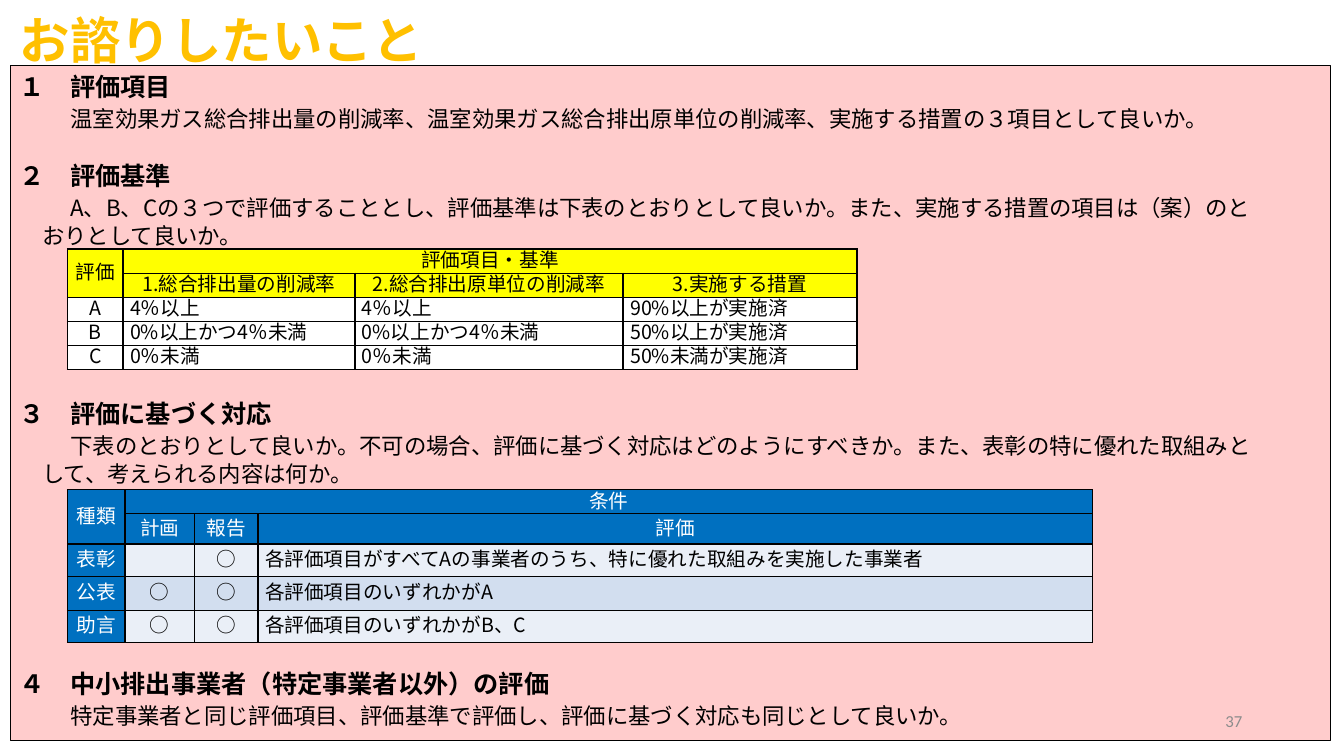
from dataclasses import dataclass

from lxml.etree import SubElement
from pptx import Presentation
from pptx.dml.color import RGBColor
from pptx.enum.shapes import MSO_SHAPE as Shape
from pptx.enum.text import MSO_ANCHOR as Anchor, PP_ALIGN as Align
from pptx.oxml.ns import qn
from pptx.slide import Slide
from pptx.util import Inches, Pt

BLACK = RGBColor(0x00, 0x00, 0x00)
WHITE = RGBColor(0xFF, 0xFF, 0xFF)
GOLD = RGBColor(0xFF, 0xC0, 0x00)
PINK = RGBColor(0xFF, 0xCC, 0xCC)
YELLOW = RGBColor(0xFF, 0xFF, 0x00)
BLUE = RGBColor(0x00, 0x70, 0xC0)
PALE = RGBColor(0xEA, 0xEF, 0xF7)
PALE_BLUE = RGBColor(0xD2, 0xDE, 0xEF)
GREY = RGBColor(0x8C, 0x8C, 0x8C)

SECTIONS = [
    (0, "１　評価項目", [
        "温室効果ガス総合排出量の削減率、温室効果ガス総合排出原単位の削減率、実施する措置の３項目として良いか。"]),
    (19.5, "２　評価基準", [
        "A、B、Cの３つで評価することとし、評価基準は下表のとおりとして良いか。また、実施する措置の項目は（案）のと",
        "おりとして良いか。"]),
    (106, "３　評価に基づく対応", [
        "下表のとおりとして良いか。不可の場合、評価に基づく対応はどのようにすべきか。また、表彰の特に優れた取組みと",
        "して、考えられる内容は何か。"]),
    (129, "４　中小排出事業者（特定事業者以外）の評価", [
        "特定事業者と同じ評価項目、評価基準で評価し、評価に基づく対応も同じとして良いか。"]),
]

CRITERIA = [
    ["評価", "評価項目・基準", "", ""],
    ["", "1.総合排出量の削減率", "2.総合排出原単位の削減率", "3.実施する措置"],
    ["A", "4％以上", "4％以上", "90%以上が実施済"],
    ["B", "0%以上かつ4％未満", "0%以上かつ4％未満", "50%以上が実施済"],
    ["C", "0％未満", "0％未満", "50%未満が実施済"],
]

RESPONSES = [
    ["種類", "条件", "", ""],
    ["", "計画", "報告", "評価"],
    ["表彰", "", "○", "各評価項目がすべてAの事業者のうち、特に優れた取組みを実施した事業者"],
    ["公表", "○", "○", "各評価項目のいずれかがA"],
    ["助言", "○", "○", "各評価項目のいずれかがB、C"],
]


@dataclass
class Painter:
    """Draws text, panels and tables on one slide in a shared style."""

    page: Slide
    font: str = "Noto Sans CJK JP"

    def set_text(self, para, text, size, color=BLACK, bold=False, align=Align.LEFT,
                 leading=None, font=None):
        para.text = text
        para.alignment = align
        if leading:
            para.line_spacing = Pt(leading)
        para.font.size = Pt(size)
        para.font.bold = bold
        para.font.color.rgb = color
        para.font.name = font or self.font
        defaults = para._p.pPr.find(qn("a:defRPr"))
        SubElement(defaults, qn("a:ea")).set("typeface", para.font.name)

    def label(self, left, top, width, height, text, size, anchor=Anchor.TOP, **style):
        box = self.page.shapes.add_textbox(*map(Inches, (left, top, width, height)))
        box.text_frame.word_wrap = True
        box.text_frame.vertical_anchor = anchor
        self.set_text(box.text_frame.paragraphs[0], text, size, **style)

    def panel(self, left, top, width, height, sections):
        box = self.page.shapes.add_shape(
            Shape.RECTANGLE, *map(Inches, (left, top, width, height)))
        box.shadow.inherit = False
        box.fill.solid()
        box.fill.fore_color.rgb = PINK
        box.line.color.rgb = BLACK
        box.line.width = Pt(0.75)
        frame = box.text_frame
        frame.word_wrap = True
        frame.vertical_anchor = Anchor.TOP
        para = frame.paragraphs[0]
        for gap, heading, lines in sections:
            if gap:
                para = frame.add_paragraph()
                para.space_before = Pt(gap)
            self.set_text(para, heading, 18, bold=True, leading=22)
            for number, line in enumerate(lines):
                para = frame.add_paragraph()
                self.set_text(para, line, 16, leading=20 if number else 22)
                margin = Inches(0.22 if number else 0.5)
                para._p.pPr.set("marL", str(margin))

    def border(self, cell):
        properties = cell._tc.get_or_add_tcPr()
        for side in ("lnL", "lnR", "lnT", "lnB"):
            line = SubElement(properties, qn(f"a:{side}"), w=str(Pt(1)))
            fill = SubElement(line, qn("a:solidFill"))
            SubElement(fill, qn("a:srgbClr"), val=str(BLACK))

    def grid(self, left, top, widths, heights, rows, centred, fill_for, color_for):
        table = self.page.shapes.add_table(
            len(rows), len(widths), Inches(left), Inches(top),
            Inches(sum(widths)), Inches(sum(heights))).table
        table.first_row = table.horz_banding = False
        for column, width in zip(table.columns, widths):
            column.width = Inches(width)
        for row, height in zip(table.rows, heights):
            row.height = Inches(height)
        for r, texts in enumerate(rows):
            for c, text in enumerate(texts):
                cell = table.cell(r, c)
                self.border(cell)
                cell.fill.solid()
                cell.fill.fore_color.rgb = fill_for(r, c)
                cell.vertical_anchor = Anchor.MIDDLE
                cell.margin_left = cell.margin_right = Inches(0.07)
                cell.margin_top = cell.margin_bottom = 0
                align = Align.CENTER if r < 2 or c < centred else Align.LEFT
                self.set_text(cell.text_frame.paragraphs[0], text, 14,
                              color_for(r, c), align=align, leading=17)
        table.cell(0, 0).merge(table.cell(1, 0))
        table.cell(0, 1).merge(table.cell(0, 3))


def response_fill(row, column):
    """Return the fill of a cell in the response table."""
    if row < 2 or column == 0:
        return BLUE
    return PALE_BLUE if row == 3 else PALE


def main():
    """Build the slide and save it."""
    deck = Presentation()
    deck.slide_width, deck.slide_height = Inches(13.33), Inches(7.5)
    painter = Painter(deck.slides.add_slide(deck.slide_layouts[6]))
    painter.label(0.1, 0, 6.97, 0.71, "お諮りしたいこと", 36,
                  color=GOLD, bold=True, leading=46)
    painter.panel(0.1, 0.65, 13.1, 6.7, SECTIONS)
    painter.grid(0.67, 2.47, [0.55, 2.3, 2.66, 2.32], [0.24] * 5, CRITERIA, 1,
                 lambda row, column: YELLOW if row < 2 else WHITE,
                 lambda row, column: BLACK)
    painter.grid(0.67, 4.86, [0.57, 0.69, 0.63, 8.28], [0.23, 0.3, 0.32, 0.34, 0.32],
                 RESPONSES, 3, response_fill,
                 lambda row, column: WHITE if row < 2 or column == 0 else BLACK)
    painter.label(9.42, 6.95, 3, 0.4, "37", 12, anchor=Anchor.MIDDLE,
                  color=GREY, align=Align.RIGHT, font="Calibri")
    deck.save("out.pptx")


if __name__ == "__main__":
    main()
